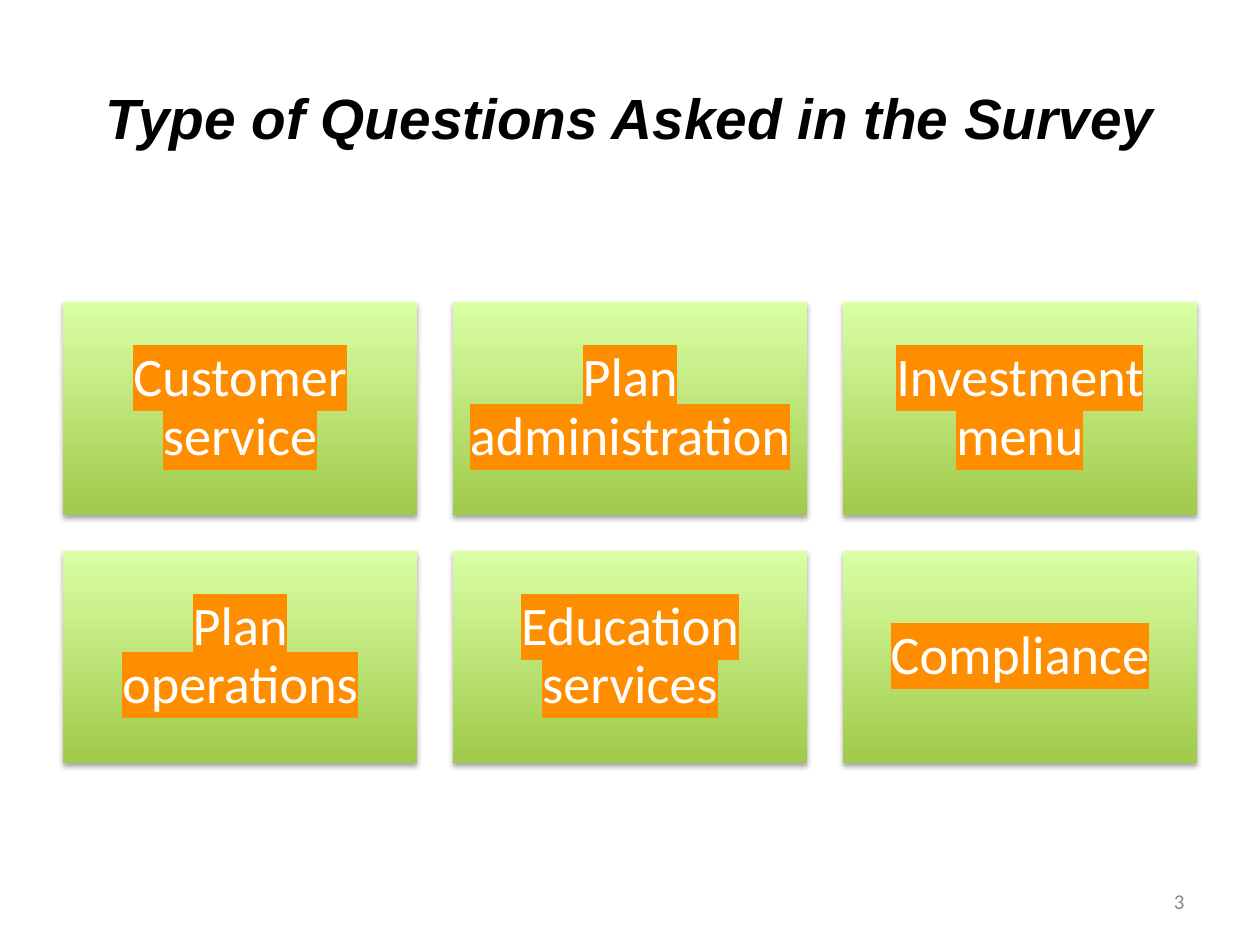
from lxml.etree import SubElement
from pptx import Presentation
from pptx.dml.color import RGBColor
from pptx.enum.shapes import MSO_SHAPE
from pptx.enum.text import MSO_ANCHOR, PP_ALIGN
from pptx.oxml import parse_xml
from pptx.oxml.ns import nsdecls, qn
from pptx.util import Cm, Pt

# Content
TITLE = "Type of Questions Asked in the Survey"
TOPICS = [
    "Customer service", "Plan administration", "Investment menu",
    "Plan operations", "Education services", "Compliance",
]
PAGE_NUMBER = "3"

# Colours
BLACK = RGBColor(0x00, 0x00, 0x00)
WHITE = RGBColor(0xFF, 0xFF, 0xFF)
GREY = RGBColor(0x89, 0x89, 0x89)
DARK_GREEN = RGBColor(0xA0, 0xCA, 0x4A)
LIGHT_GREEN = RGBColor(0xDA, 0xFF, 0xA5)
ORANGE = RGBColor(0xFF, 0x8D, 0x00)

# Card grid
COLUMNS = 3
LEFT, TOP = Cm(1.27), Cm(6.09)
CARD_WIDTH, CARD_HEIGHT = Cm(7.14), Cm(4.29)
GAP = Cm(0.72)
CARD_INSET = Cm(0.33)

SHADOW = (
    f'<a:effectLst {nsdecls("a")}>'
    f'<a:outerShdw blurRad="{Pt(3.1)}" dist="{Pt(1.8)}" dir="5400000" rotWithShape="0">'
    '<a:srgbClr val="000000"><a:alpha val="35000"/></a:srgbClr>'
    '</a:outerShdw></a:effectLst>'
)


def write(shape, text, font_name, size, color, align, anchor):
    frame = shape.text_frame
    frame.word_wrap = True
    frame.vertical_anchor = anchor
    paragraph = frame.paragraphs[0]
    paragraph.text = text
    paragraph.alignment = align
    font = paragraph.font
    font.name, font.size, font.color.rgb = font_name, Pt(size), color
    return paragraph


def add_card(slide, index, topic):
    row, column = divmod(index, COLUMNS)
    card = slide.shapes.add_shape(
        MSO_SHAPE.RECTANGLE,
        LEFT + column * (CARD_WIDTH + GAP), TOP + row * (CARD_HEIGHT + GAP),
        CARD_WIDTH, CARD_HEIGHT)
    card.line.fill.background()

    # Gradient from dark at the bottom to light at the top
    card.fill.gradient()
    card.fill.gradient_angle = 90
    for stop, position, color in zip(
            card.fill.gradient_stops, (0, 1), (DARK_GREEN, LIGHT_GREEN)):
        stop.position, stop.color.rgb = position, color
    card._element.spPr.append(parse_xml(SHADOW))

    # Highlighted label
    frame = card.text_frame
    frame.margin_left = frame.margin_right = CARD_INSET
    frame.margin_top = frame.margin_bottom = CARD_INSET
    paragraph = write(card, topic, "Calibri", 31, WHITE,
                      PP_ALIGN.CENTER, MSO_ANCHOR.MIDDLE)
    paragraph.line_spacing = 0.9
    paragraph.space_after = Pt(11)
    run_properties = paragraph.runs[0]._r.get_or_add_rPr()
    highlight = SubElement(run_properties, qn("a:highlight"))
    SubElement(highlight, qn("a:srgbClr"), val=str(ORANGE))


def main():
    presentation = Presentation()
    presentation.slide_width, presentation.slide_height = Cm(25.4), Cm(19.05)
    slide = presentation.slides.add_slide(presentation.slide_layouts[5])

    # Title
    title = slide.shapes.title
    title.left, title.top = LEFT, Cm(0.76)
    title.width, title.height = Cm(22.86), Cm(2.41)
    heading = write(title, TITLE, "Arial", 32.4, BLACK,
                    PP_ALIGN.CENTER, MSO_ANCHOR.BOTTOM)
    heading.font.bold = heading.font.italic = True

    # Topic cards
    for index, topic in enumerate(TOPICS):
        add_card(slide, index, topic)

    # Page number
    number = slide.shapes.add_textbox(Cm(18.2), Cm(17.66), Cm(5.93), Cm(1.01))
    write(number, PAGE_NUMBER, "Calibri", 12, GREY,
          PP_ALIGN.RIGHT, MSO_ANCHOR.MIDDLE).space_after = Pt(6)

    presentation.save("out.pptx")


if __name__ == "__main__":
    main()
